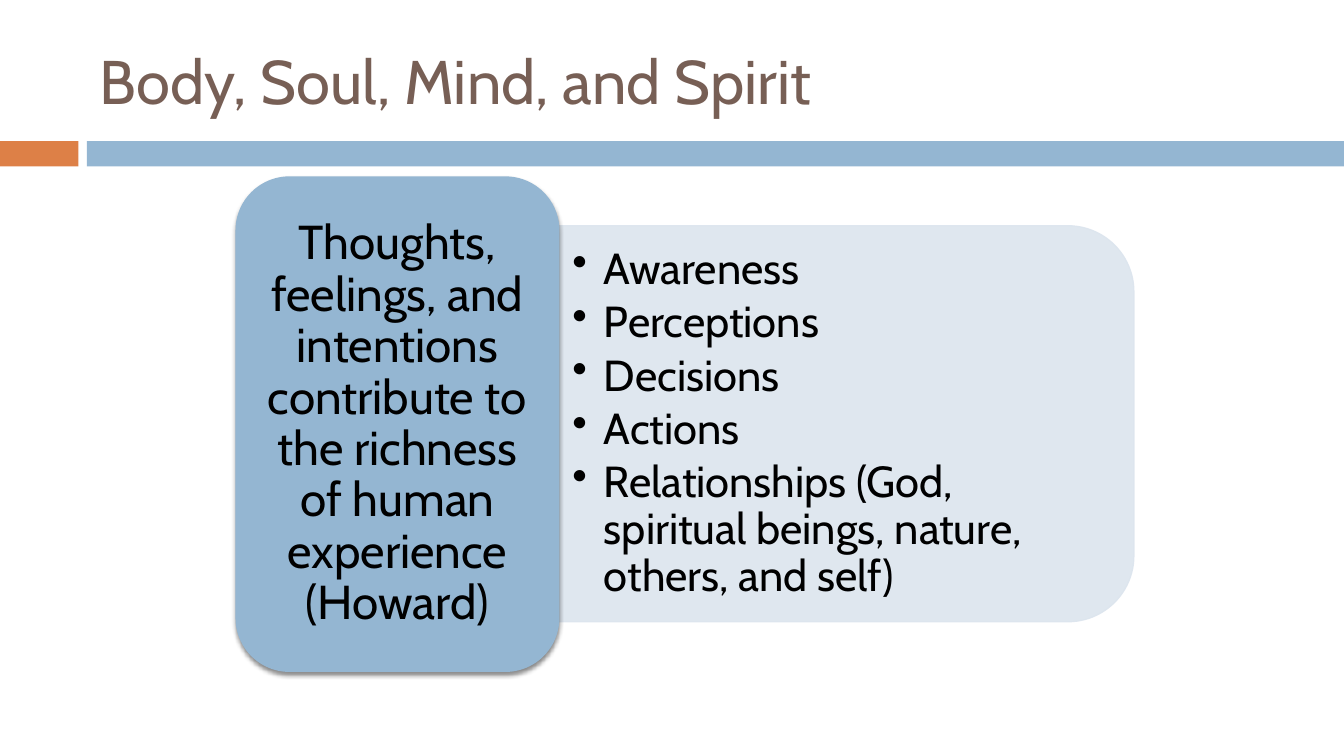
from lxml import etree
from pptx import Presentation
from pptx.dml.color import RGBColor
from pptx.enum import shapes, text
from pptx.oxml import ns
from pptx.util import Pt

FONT = "Cabin"
BLUE, ORANGE, PALE, BROWN, BLACK = "94B6D2", "DD8047", "DCE5EE", "775F55", "000000"
KIND = shapes.MSO_SHAPE
ALIGN = text.PP_ALIGN

THOUGHT = ("Thoughts, feelings, and intentions contribute to "
           "the richness of human experience (Howard)")
ITEMS = ["Awareness", "Perceptions", "Decisions", "Actions",
         "Relationships (God, spiritual beings, nature, others, and self)"]


def color(code):
    return RGBColor.from_string(code)


def add_xml(parent, tag, **attrs):
    return etree.SubElement(parent, ns.qn(tag), **attrs)


def add_block(slide, kind, box, fill):
    block = slide.shapes.add_shape(kind, *map(Pt, box))
    block.shadow.inherit = False
    block.fill.solid()
    block.fill.fore_color.rgb = color(fill)
    block.line.fill.background()
    return block


def fade(block, alpha):
    """Set the opacity, in percent, of every solid colour in the block."""
    for tone in block._element.spPr.iter(ns.qn("a:srgbClr")):
        add_xml(tone, "a:alpha", val=str(alpha * 1000))


def drop_shadow(block):
    effects = block._element.spPr.find(ns.qn("a:effectLst"))
    shade = add_xml(effects, "a:outerShdw", blurRad=str(Pt(3)), dist=str(Pt(2.4)),
                    dir="5400000", algn="ctr", rotWithShape="0")
    tone = add_xml(shade, "a:srgbClr", val=BLACK)
    add_xml(tone, "a:alpha", val="45000")


def add_text(slide, box, lines, size, tone=BLACK, inset=(7.2, 3.6),
             align=ALIGN.LEFT, space=1, after=0):
    frame = slide.shapes.add_textbox(*map(Pt, box)).text_frame
    frame.word_wrap = True
    frame.vertical_anchor = text.MSO_ANCHOR.MIDDLE
    frame.margin_left = frame.margin_right = Pt(inset[0])
    frame.margin_top = frame.margin_bottom = Pt(inset[1])
    frame.text = "\n".join(lines)
    for para in frame.paragraphs:
        para.alignment = align
        para.line_spacing = space
        para.space_after = Pt(after)
        for run in para.runs:
            run.font.name = FONT
            run.font.size = Pt(size)
            run.font.color.rgb = color(tone)
    return frame


def add_bullets(frame, indent):
    for para in frame.paragraphs:
        props = para._p.get_or_add_pPr()
        props.set("marL", str(Pt(indent)))
        props.set("indent", str(-Pt(indent)))
        add_xml(props, "a:buChar", char="•")


def add_header(slide):
    add_block(slide, KIND.RECTANGLE, (0, 100.8, 56, 18), ORANGE)
    add_block(slide, KIND.RECTANGLE, (62, 100.8, 898, 18), BLUE)
    add_text(slide, (64, 18, 856, 78), ["Body, Soul, Mind, and Spirit"], 44, BROWN)


def add_list(slide):
    panel = add_block(slide, KIND.ROUND_2_SAME_RECTANGLE,
                      (463, 97.2, 283, 411), PALE)
    panel.rotation = 90
    panel.line.color.rgb = color(PALE)
    panel.line.width = Pt(0.79)
    fade(panel, 90)
    frame = add_text(slide, (399.6, 175, 396.7, 255.6), ITEMS, 31,
                     inset=(9.3, 4.6), space=0.9, after=4.65)
    add_bullets(frame, 22.5)


def add_card(slide):
    card = add_block(slide, KIND.ROUNDED_RECTANGLE, (168.2, 126, 231.4, 354), BLUE)
    drop_shadow(card)
    add_text(slide, (179.5, 137.4, 208.8, 331.4), [THOUGHT], 34,
             inset=(10.2, 5.1), align=ALIGN.CENTER, space=0.9)


def main():
    deck = Presentation()
    deck.slide_width, deck.slide_height = Pt(960), Pt(540)
    slide = deck.slides.add_slide(deck.slide_layouts[6])
    add_header(slide)
    add_list(slide)
    add_card(slide)
    deck.save("out.pptx")


if __name__ == "__main__":
    main()
